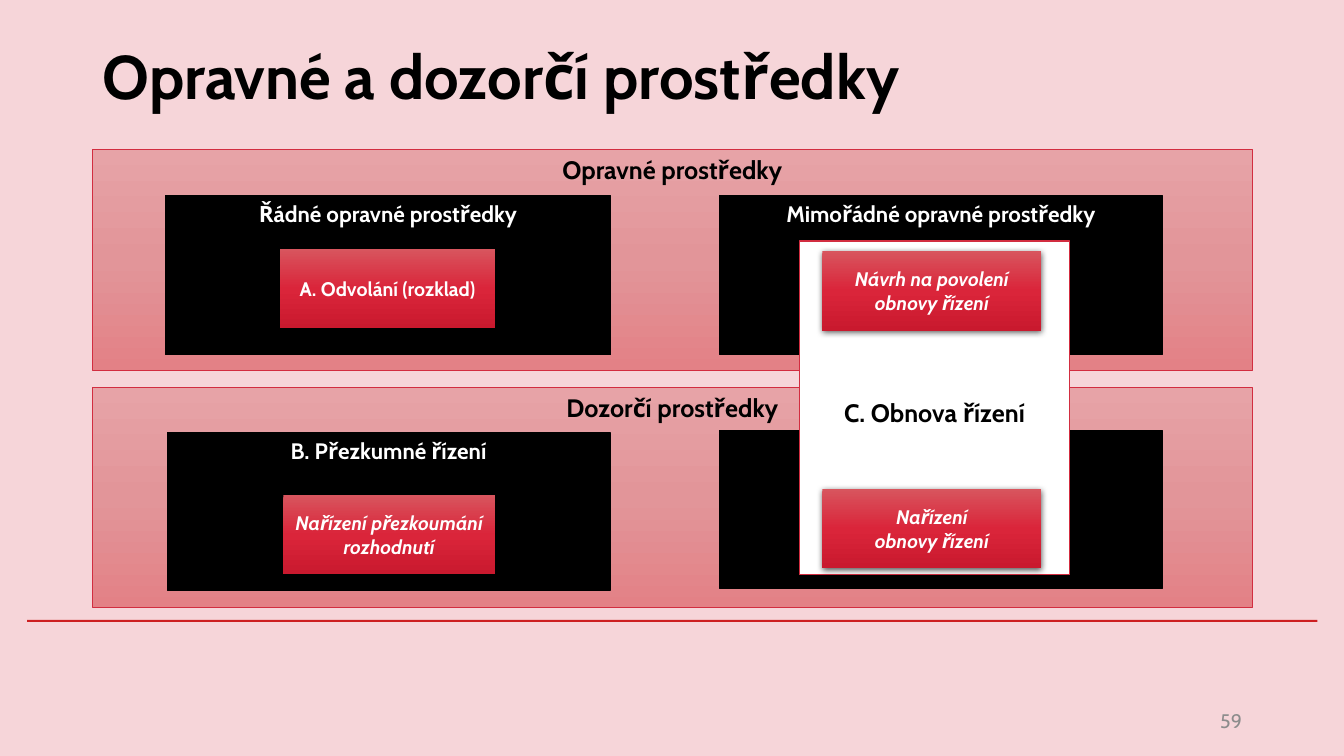
import pptx
import pptx.util
import pptx.dml.color
import pptx.enum.shapes
import pptx.enum.text
import pptx.oxml.ns
import lxml.etree
from dataclasses import dataclass

Pt = pptx.util.Pt
ALIGN = pptx.enum.text.PP_ALIGN
ANCHOR = pptx.enum.text.MSO_ANCHOR
qn = pptx.oxml.ns.qn


@dataclass(frozen=True)
class Theme:
    face: str = "Cabin"
    back: str = "F6D5D9"
    rule: str = "CD1F21"
    edge: str = "D22D40"
    dark: str = "000000"
    light: str = "FFFFFF"
    gray: str = "8C8C8C"
    band: tuple = ("E7A3A7", "E29599", "E38186")
    chip: tuple = ("D8555E", "DA253A", "C9192E")
    title: int = 44
    head: int = 18
    sub: int = 16
    small: int = 14


THEME = Theme()
WIDE = pptx.util.Inches(13.33)
HIGH = pptx.util.Inches(7.5)

# Shares of the slide's size, in percent
LEFT, SPAN = 6.9, 86.25
BAND_TOP, BAND_HIGH, BAND_STEP = 19.73, 29.2, 31.47
CHIP_HIGH = 10.53


def place(x, y, w, h):
    """Turn percent shares into slide lengths."""
    return [int(side * share / 100)
            for side, share in zip((WIDE, HIGH, WIDE, HIGH), (x, y, w, h))]


def rgb(code):
    return pptx.dml.color.RGBColor.from_string(code)


def style(thing, **values):
    for name, value in values.items():
        setattr(thing, name, value)


def write(shape, text, size, color, align=ALIGN.CENTER, bold=True,
          slant=False, **frame):
    body = shape.text_frame
    style(body, **{"word_wrap": True, **frame})
    for i, line in enumerate(text.split("\n")):
        para = body.paragraphs[0] if i == 0 else body.add_paragraph()
        para.alignment = align
        run = para.add_run()
        run.text = line
        style(run.font, name=THEME.face, size=Pt(size), bold=bold, italic=slant)
        run.font.color.rgb = rgb(color)


def blend(fill, colors):
    """Fill from top to bottom with evenly spaced colours."""
    fill.gradient()
    fill.gradient_angle = 270
    stops = fill._xPr.find(qn("a:gradFill")).find(qn("a:gsLst"))
    for stop in list(stops):
        stops.remove(stop)
    for i, color in enumerate(colors):
        stop = lxml.etree.SubElement(
            stops, qn("a:gs"), pos=str(100000 * i // (len(colors) - 1)))
        lxml.etree.SubElement(stop, qn("a:srgbClr"), val=color)


def block(slide, area, fill, edge=None, width=1):
    shape = slide.shapes.add_shape(
        pptx.enum.shapes.MSO_SHAPE.RECTANGLE, *place(*area))
    shape.shadow.inherit = False
    if isinstance(fill, tuple):
        blend(shape.fill, fill)
    else:
        shape.fill.solid()
        shape.fill.fore_color.rgb = rgb(fill)
    if edge:
        shape.line.color.rgb = rgb(edge)
        shape.line.width = Pt(width)
    else:
        shape.line.fill.background()
    return shape


def band(slide, row, text):
    area = LEFT, BAND_TOP + row * BAND_STEP, SPAN, BAND_HIGH
    shape = block(slide, area, THEME.band, THEME.edge, 0.5)
    write(shape, text, THEME.head, THEME.dark, vertical_anchor=ANCHOR.TOP)


def panel(slide, area, text=""):
    shape = block(slide, area, THEME.dark, THEME.dark)
    if text:
        write(shape, text, THEME.sub, THEME.light, vertical_anchor=ANCHOR.TOP)


def chip(slide, x, y, w, text, slant=True):
    shape = block(slide, (x, y, w, CHIP_HIGH), THEME.chip)
    effects = shape._element.spPr.find(qn("a:effectLst"))
    shade = lxml.etree.SubElement(
        effects, qn("a:outerShdw"), blurRad=str(Pt(4.5)), dist=str(Pt(1.5)),
        dir="5400000", algn="ctr", rotWithShape="0")
    color = lxml.etree.SubElement(shade, qn("a:srgbClr"), val=THEME.dark)
    lxml.etree.SubElement(color, qn("a:alpha"), val="63000")
    write(shape, text, THEME.small, THEME.light, slant=slant,
          vertical_anchor=ANCHOR.MIDDLE, word_wrap=False)


def heading(slide, text):
    title = slide.shapes.title
    sides = place(LEFT, 0.27, SPAN, 19.33)
    style(title, **dict(zip(("left", "top", "width", "height"), sides)))
    write(title, text, THEME.title, THEME.dark, ALIGN.LEFT,
          vertical_anchor=ANCHOR.MIDDLE,
          auto_size=pptx.enum.text.MSO_AUTO_SIZE.NONE)


def number(slide, text):
    label = slide.shapes.add_textbox(*place(70.65, 92.67, 22.5, 5.33))
    write(label, text, THEME.small, THEME.gray, ALIGN.RIGHT, bold=False,
          vertical_anchor=ANCHOR.MIDDLE)


def main():
    deck = pptx.Presentation()
    style(deck, slide_width=WIDE, slide_height=HIGH)
    slide = deck.slides.add_slide(deck.slide_layouts.get_by_name("Title Only"))
    slide.background.fill.solid()
    slide.background.fill.fore_color.rgb = rgb(THEME.back)

    block(slide, (2.03, 82, 96, 0.27), THEME.rule)
    heading(slide, "Opravné a dozorčí prostředky")
    number(slide, "59")

    band(slide, 1, "Dozorčí prostředky")
    panel(slide, (12.45, 57.2, 32.93, 20.93), "B. Přezkumné řízení")
    chip(slide, 21.08, 65.47, 15.75, "Nařízení přezkoumání\nrozhodnutí")
    panel(slide, (53.55, 56.93, 32.93, 20.93))

    band(slide, 0, "Opravné prostředky")
    panel(slide, (53.55, 25.87, 32.93, 21.07), "Mimořádné opravné prostředky")
    bridge = block(slide, (59.48, 31.87, 20.1, 44.13), THEME.light, THEME.edge)
    write(bridge, "C. Obnova řízení", THEME.head, THEME.dark,
          vertical_anchor=ANCHOR.MIDDLE, margin_top=Pt(10))
    panel(slide, (12.3, 25.87, 33.15, 21.07), "Řádné opravné prostředky")
    chip(slide, 20.85, 32.93, 15.98, "A. Odvolání (rozklad)", slant=False)
    for y, text in ((33.2, "Návrh na povolení\nobnovy řízení"),
                    (64.67, "Nařízení\nobnovy řízení")):
        chip(slide, 61.2, y, 16.28, text)

    deck.save("out.pptx")


if __name__ == "__main__":
    main()
